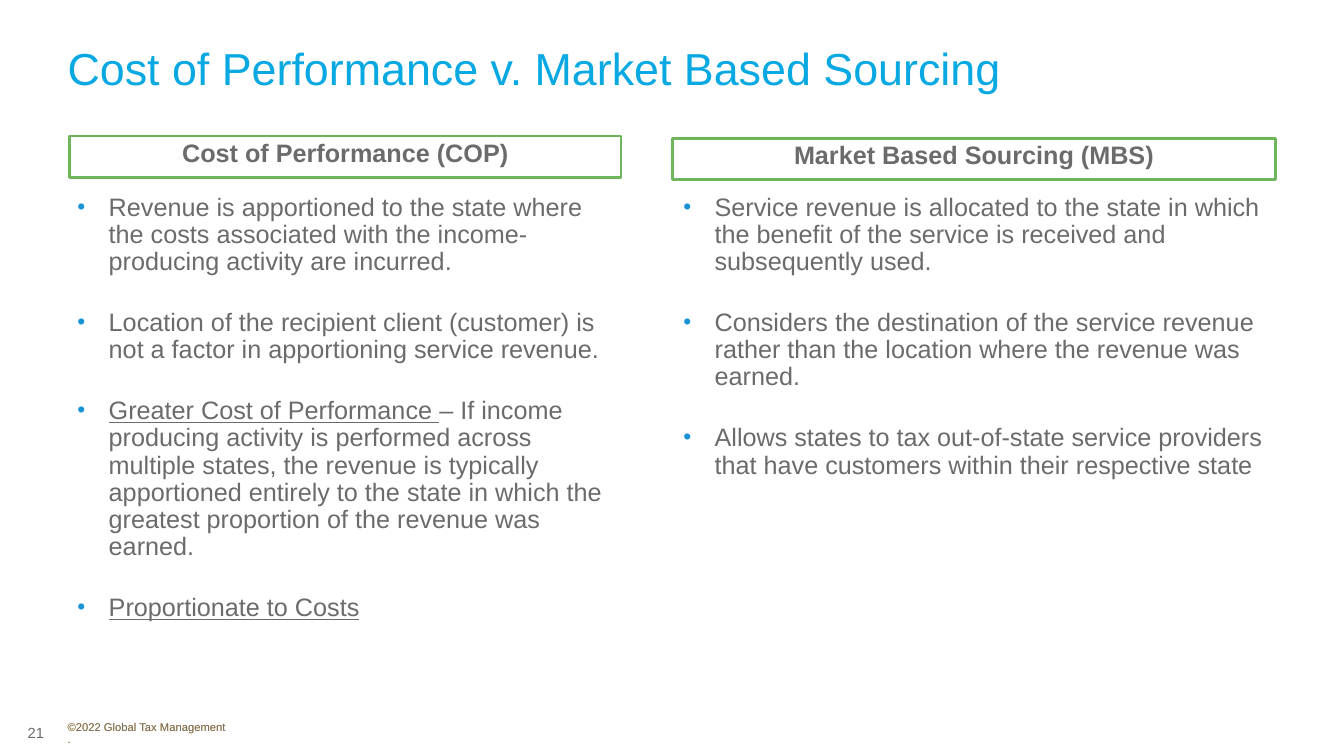
from lxml.etree import SubElement
from pptx import Presentation
from pptx.dml.color import RGBColor
from pptx.enum.shapes import MSO_SHAPE
from pptx.enum.text import MSO_ANCHOR, MSO_AUTO_SIZE, PP_ALIGN
from pptx.oxml.ns import qn
from pptx.util import Inches, Pt

WHITE = RGBColor(0xFF, 0xFF, 0xFF)
GRAY = RGBColor(0x6B, 0x6B, 0x6B)
GOLD = RGBColor(0xF5, 0xB1, 0x34)
SKY = RGBColor(0x08, 0xA9, 0xE2)
GREEN = RGBColor(0x6E, 0xB5, 0x5C)
BULLET_BLUE = RGBColor(0x19, 0x93, 0xD3)


class SlideBuilder:
    font_name = "Arial"
    body_size = 18
    line_spacing = 0.9

    def __init__(self, slide):
        self.slide = slide

    def style(self, paragraph, size, color, align=PP_ALIGN.LEFT, bold=False):
        paragraph.alignment = align
        paragraph.line_spacing = self.line_spacing
        for run in paragraph.runs:
            run.font.name = self.font_name
            run.font.size = Pt(size)
            run.font.bold = bold
            run.font.color.rgb = color

    def unpad(self, frame, anchor):
        frame.margin_left = frame.margin_right = 0
        frame.margin_top = frame.margin_bottom = 0
        frame.vertical_anchor = anchor

    def title(self, text, left, top, width, height):
        title = self.slide.shapes.title
        title.left, title.top = Inches(left), Inches(top)
        title.width, title.height = Inches(width), Inches(height)
        frame = title.text_frame
        frame.text = text
        frame.auto_size = MSO_AUTO_SIZE.NONE
        self.unpad(frame, MSO_ANCHOR.BOTTOM)
        self.style(frame.paragraphs[0], 32, SKY)

    def text_box(self, left, top, width, height, wrap=True):
        box = self.slide.shapes.add_textbox(
            Inches(left), Inches(top), Inches(width), Inches(height))
        box.text_frame.word_wrap = wrap
        return box.text_frame

    def footer(self, text, place, size, color, align=PP_ALIGN.LEFT, wrap=True):
        frame = self.text_box(*place, wrap=wrap)
        frame.text = text
        self.unpad(frame, MSO_ANCHOR.MIDDLE)
        self.style(frame.paragraphs[0], size, color, align)

    def heading(self, text, left, top, width, height):
        heading = self.slide.shapes.add_shape(
            MSO_SHAPE.RECTANGLE, Inches(left), Inches(top), Inches(width), Inches(height))
        heading.shadow.inherit = False
        heading.fill.solid()
        heading.fill.fore_color.rgb = WHITE
        heading.line.color.rgb = GREEN
        heading.line.width = Pt(2)
        frame = heading.text_frame
        frame.text = text
        frame.vertical_anchor = MSO_ANCHOR.TOP
        self.style(frame.paragraphs[0], self.body_size, GRAY, PP_ALIGN.CENTER, bold=True)
        frame.paragraphs[0].space_after = Pt(6)

    def bullet(self, paragraph):
        properties = paragraph._p.get_or_add_pPr()
        indent = Inches(0.31)
        properties.set("marL", str(indent))
        properties.set("indent", str(-indent))
        color = SubElement(properties, qn("a:buClr"))
        SubElement(color, qn("a:srgbClr"), val=str(BULLET_BLUE))
        SubElement(properties, qn("a:buSzPct"), val="90000")
        SubElement(properties, qn("a:buFont"), typeface=self.font_name)
        SubElement(properties, qn("a:buChar"), char="•")

    def bullets(self, points, left, top, width, height):
        """Each point is a pair: underlined lead, plain text."""
        frame = self.text_box(left, top, width, height)
        for index, (lead, body) in enumerate(points):
            paragraph = frame.paragraphs[0] if index == 0 else frame.add_paragraph()
            self.bullet(paragraph)
            for text, underlined in ((lead, True), (body, False)):
                if text:
                    run = paragraph.add_run()
                    run.text = text
                    run.font.underline = underlined
            self.style(paragraph, self.body_size, GRAY)
            paragraph.space_before = Pt(18 if index else 0)
            paragraph.space_after = Pt(6)


COST_POINTS = [
    ("", "Revenue is apportioned to the state where the costs associated with "
         "the income-producing activity are incurred."),
    ("", "Location of the recipient client (customer) is not a factor in "
         "apportioning service revenue."),
    ("Greater Cost of Performance ",
     "– If income producing activity is performed across multiple states, the "
     "revenue is typically apportioned entirely to the state in which the "
     "greatest proportion of the revenue was earned."),
    ("Proportionate to Costs", ""),
]
MARKET_POINTS = [
    ("", "Service revenue is allocated to the state in which the benefit of the "
         "service is received and subsequently used."),
    ("", "Considers the destination of the service revenue rather than the "
         "location where the revenue was earned."),
    ("", "Allows states to tax out-of-state service providers that have "
         "customers within their respective state"),
]


def main():
    presentation = Presentation()
    presentation.slide_width = Inches(13.33)
    presentation.slide_height = Inches(7.5)
    builder = SlideBuilder(presentation.slides.add_slide(presentation.slide_layouts[5]))

    # Footer: gray copyright line over a gold one, and page number
    for color in (GOLD, GRAY):
        builder.footer("©2022 Global Tax Management\t.", (0.67, 7.18, 1.89, 0.2),
                       8, color, wrap=False)
    builder.footer("21", (0.05, 7.08, 0.61, 0.4), 10.5, GRAY, PP_ALIGN.CENTER)

    # Title
    builder.title("Cost of Performance v. Market Based Sourcing", 0.67, 0.07, 11.51, 0.87)

    # Cost of performance column
    builder.heading("Cost of Performance (COP)", 0.69, 1.35, 5.47, 0.41)
    builder.bullets(COST_POINTS, 0.67, 1.88, 5.49, 4.81)

    # Market based sourcing column
    builder.heading("Market Based Sourcing (MBS)", 6.67, 1.37, 5.98, 0.41)
    builder.bullets(MARKET_POINTS, 6.68, 1.88, 5.96, 4.81)

    presentation.save("out.pptx")


if __name__ == "__main__":
    main()
